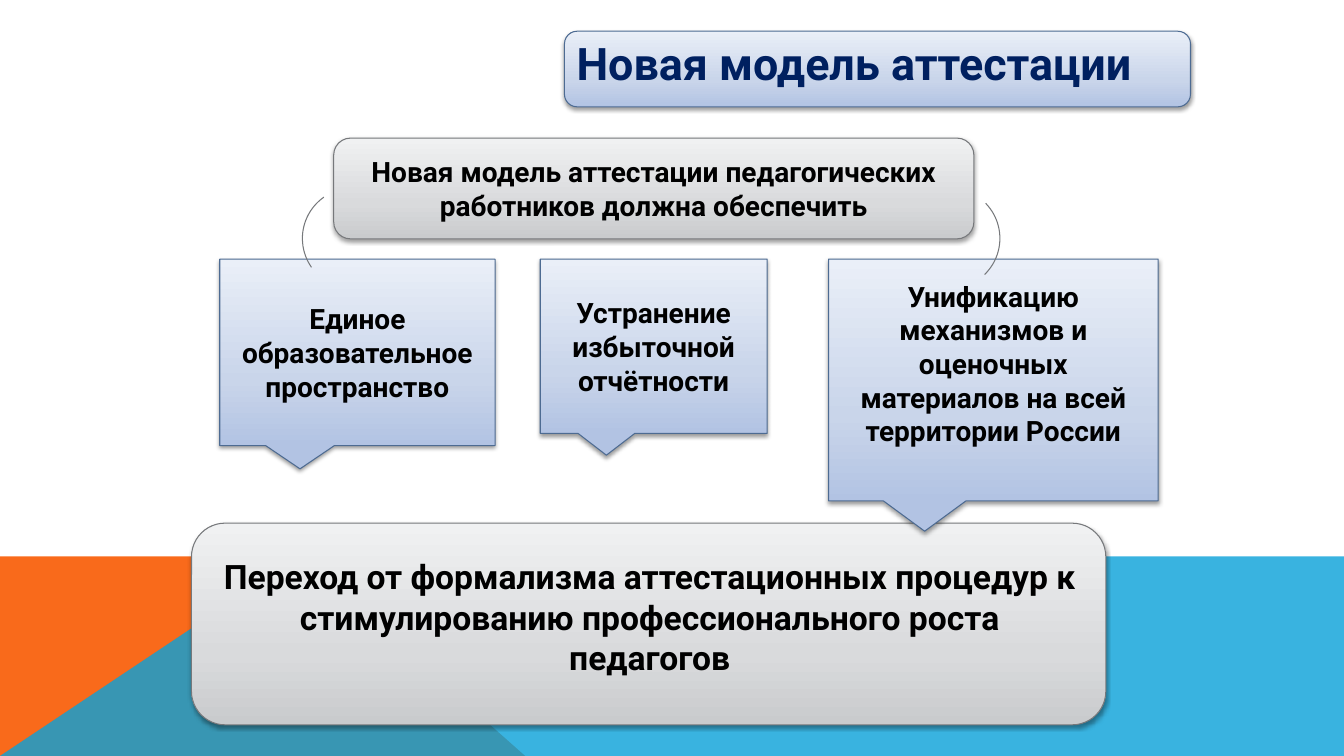
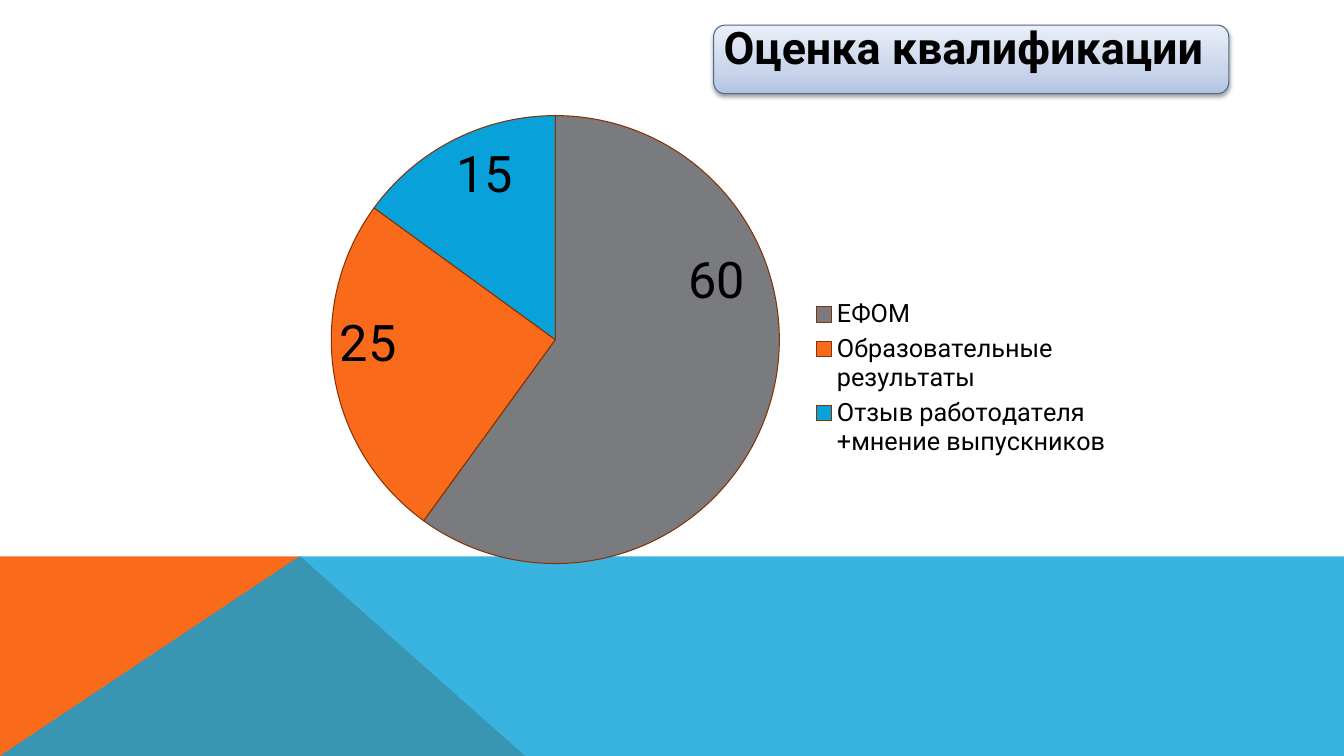
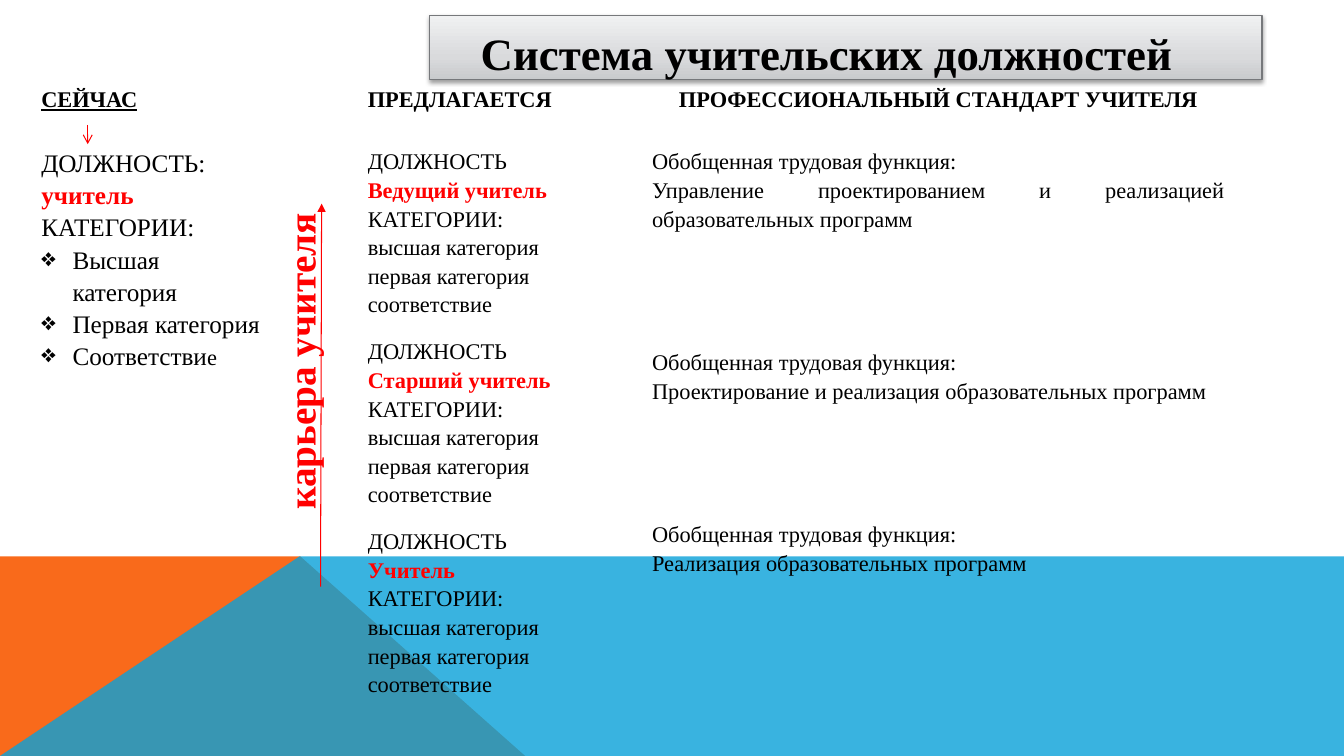
import dataclasses

import pptx
import pptx.chart.data
import pptx.dml.color
import pptx.enum.chart
import pptx.enum.shapes
import pptx.enum.text
import pptx.oxml
import pptx.oxml.ns
import pptx.util

RGB = pptx.dml.color.RGBColor
Inches, Pt = pptx.util.Inches, pptx.util.Pt
qn = pptx.oxml.ns.qn
SHAPE = pptx.enum.shapes.MSO_SHAPE
ALIGN = pptx.enum.text.PP_ALIGN
ANCHOR = pptx.enum.text.MSO_ANCHOR

# Shared colours and fonts
BLACK = RGB(0x00, 0x00, 0x00)
NAVY = RGB(0x00, 0x20, 0x60)
RED = RGB(0xFF, 0x00, 0x00)
ORANGE = RGB(0xF9, 0x6A, 0x1B)
CYAN = RGB(0x08, 0xA1, 0xD9)
GRAY = RGB(0x79, 0x7B, 0x7E)
BROWN = RGB(0x86, 0x32, 0x04)
GRAY_LINE = RGB(0x76, 0x78, 0x7B)
BLUE_LINE = RGB(0x4D, 0x6B, 0x92)
BLUE_STOPS = (RGB(0xB2, 0xC3, 0xE3), RGB(0xC9, 0xD5, 0xEA), RGB(0xEA, 0xEF, 0xF8))
GRAY_STOPS = (RGB(0xC9, 0xCB, 0xCD), RGB(0xD9, 0xDA, 0xDC), RGB(0xF0, 0xF1, 0xF2))
BLUE, SILVER = (BLUE_STOPS, BLUE_LINE), (GRAY_STOPS, GRAY_LINE)
SANS, SERIF = "Roboto", "Times New Roman"
NO_STYLE = "{2D5ABB26-0587-4C30-8999-92F81FD0307C}"


@dataclasses.dataclass
class Box:
    """A region; boxes inside it are given in hundredths of its width and height."""
    x: float
    y: float
    w: float
    h: float

    def sub(self, x, y, w, h):
        return Box(self.x + self.w * x / 100, self.y + self.h * y / 100,
                   self.w * w / 100, self.h * h / 100)

    def at(self):
        return [Inches(v) for v in (self.x, self.y, self.w, self.h)]

    def point(self, x, y):
        return Inches(self.x + self.w * x / 100), Inches(self.y + self.h * y / 100)


PAGE = Box(0, 0, 13.33, 7.5)


def xml(text):
    return pptx.oxml.parse_xml(text.replace(" ", f" {pptx.oxml.ns.nsdecls('a')} ", 1))


def apply(obj, formats):
    for name, value in formats.items():
        setattr(obj, name, value)


def set_font(font, color=BLACK, **formats):
    apply(font, formats)
    font.color.rgb = color


def write(tf, paras, margins=None, **base):
    """Each paragraph is (runs, paragraph formats); each run is (text, font formats)."""
    apply(tf, {"word_wrap": True, **(margins or {})})
    for i, (runs, formats) in enumerate(paras):
        p = tf.add_paragraph() if i else tf.paragraphs[0]
        apply(p, formats)
        for text, font in runs:
            r = p.add_run()
            r.text = text
            set_font(r.font, **{**base, **font})


def set_indent(p, left, first=0):
    pPr = p._p.get_or_add_pPr()
    pPr.set("marL", str(Inches(left)))
    pPr.set("indent", str(Inches(first)))
    return pPr


def panel(slide, box, kind, style):
    """A shape with a vertical gradient and a soft shadow."""
    stops, line = style
    sp = slide.shapes.add_shape(kind, *box.at())
    sp.fill.gradient()
    sp.fill.gradient_angle = 90
    gs_list = sp.element.spPr.find(qn("a:gradFill")).find(qn("a:gsLst"))
    for gs in list(gs_list):
        gs_list.remove(gs)
    for pos, color in zip((0, 35, 100), stops):
        gs_list.append(xml(f'<a:gs pos="{pos * 1000}"><a:srgbClr val="{color}"/></a:gs>'))
    sp.line.color.rgb = line
    sp.line.width = Pt(0.75)
    sp.element.spPr.append(xml(
        f'<a:effectLst ><a:outerShdw blurRad="{Pt(3.1)}" dist="{Pt(1.6)}" dir="5400000" '
        'rotWithShape="0"><a:srgbClr val="000000"><a:alpha val="38000"/></a:srgbClr>'
        '</a:outerShdw></a:effectLst>'))
    return sp


def caption(slide, box, text, align, margins=None, **font):
    tf = slide.shapes.add_textbox(*box.at()).text_frame
    write(tf, [([(text, {})], {"alignment": align})], margins, bold=True, **font)


def arrow(slide, box, start, end, tail):
    c = slide.shapes.add_connector(pptx.enum.shapes.MSO_CONNECTOR.STRAIGHT,
                                   *box.point(*start), *box.point(*end))
    c.line.color.rgb = RED
    c.line.width = Pt(0.75)
    c.line._get_or_add_ln().append(xml(f'<a:tailEnd type="{tail}"/>'))
    c._element.spPr.append(xml("<a:effectLst />"))


def bands(slide, layout, box):
    """Bottom bands, kept on the layout that all slides use."""
    top = 73.6
    orange = [(0, 100), (0, top), (22.35, top), (39.08, 100)]
    blue = [(0, 100), (22.28, top), (100, top), (100, 100)]
    for points, color, alpha in ((orange, ORANGE, 100), (blue, CYAN, 80)):
        start, *rest = [box.point(*pt) for pt in points]
        fb = slide.shapes.build_freeform(*start)
        fb.add_line_segments(rest, close=True)
        sp = fb.convert_to_shape()
        sp.shadow.inherit = False
        sp.fill.solid()
        sp.fill.fore_color.rgb = color
        sp.line.fill.background()
        clr = sp.element.spPr.find(qn("a:solidFill"))[0]
        clr.append(xml(f'<a:alpha val="{alpha * 1000}"/>'))
        layout.shapes._spTree.append(sp.element)


# Slide 1: model
def callouts(slide, box):
    for x, w, h, text, bottom in (
            (0, 29.33, 77.08, "Единое образовательное пространство", 0.05),
            (34.15, 24.17, 72.08, "Устранение избыточной отчётности", 0.05),
            (64.87, 35.13, 100, "Унификацию механизмов и оценочных материалов "
                                "на всей территории России", 0.38)):
        sp = panel(slide, box.sub(x, 0, w, h), SHAPE.RECTANGULAR_CALLOUT, BLUE)
        write(sp.text_frame, [([(text, {})], {"alignment": ALIGN.CENTER})],
              {"margin_bottom": Inches(bottom), "vertical_anchor": ANCHOR.MIDDLE},
              name=SANS, size=Pt(20), bold=True)


def model_slide(slide, box):
    panel(slide, box.sub(42, 4.13, 46.58, 10), SHAPE.ROUNDED_RECTANGLE, BLUE)
    panel(slide, box.sub(14.25, 69.2, 68.03, 26.67), SHAPE.ROUNDED_RECTANGLE, SILVER)
    lead = panel(slide, box.sub(24.83, 18.27, 47.63, 13.33), SHAPE.ROUNDED_RECTANGLE, SILVER)
    write(lead.text_frame,
          [([("Новая модель аттестации педагогических работников должна обеспечить", {})],
            {"alignment": ALIGN.CENTER})],
          {"vertical_anchor": ANCHOR.MIDDLE}, name=SANS, size=Pt(20), bold=True)
    caption(slide, box.sub(9.38, 4.13, 79.5, 8.53), "Новая модель аттестации", ALIGN.RIGHT,
            {"margin_right": Inches(0.62)}, name=SANS, size=Pt(32), color=NAVY)
    callouts(slide, box.sub(16.35, 34.27, 69.83, 32))
    # Arcs from the lead to the outer callouts
    for x, angle in ((66.9, 45.9), (22.5, 235)):
        arc = slide.shapes.add_shape(SHAPE.ARC, *box.sub(x, 24.87, 7.5, 13.33).at())
        arc.rotation = angle
        arc.shadow.inherit = False
        arc.fill.background()
        arc.line.color.rgb = GRAY_LINE
        arc.line.width = Pt(0.75)
    caption(slide, box.sub(15.53, 72.93, 65.63, 17.47),
            "Переход от формализма аттестационных процедур к стимулированию "
            "профессионального роста педагогов", ALIGN.CENTER, name=SANS, size=Pt(24))


# Slide 2: pie chart
def chart_layout(x, y, w=None, h=None, inner=False):
    modes = ['<c:layoutTarget val="inner"/>'] if inner else []
    if w:
        modes += ['<c:xMode val="edge"/>', '<c:yMode val="edge"/>']
    sizes = [("x", x), ("y", y), ("w", w), ("h", h)]
    values = [f'<c:{k} val="{v}"/>' for k, v in sizes if v is not None]
    return pptx.oxml.parse_xml(
        f'<c:layout {pptx.oxml.ns.nsdecls("c")}><c:manualLayout>'
        f'{"".join(modes + values)}</c:manualLayout></c:layout>')


def put_layout(parent, after, layout):
    for old in parent.findall(qn("c:layout")):
        parent.remove(old)
    if after is None:
        parent.insert(0, layout)
    else:
        parent.find(qn(after)).addnext(layout)


def pie(slide, box):
    data = pptx.chart.data.CategoryChartData()
    data.categories = ["ЕФОМ", "Образовательные результаты",
                       "Отзыв работодателя +мнение выпускников"]
    data.add_series("Series 1", (60, 25, 15))
    chart = slide.shapes.add_chart(pptx.enum.chart.XL_CHART_TYPE.PIE, *box.at(), data).chart
    chart.has_title = False
    set_font(chart.font, name=SANS, size=Pt(18))
    plot = chart.plots[0]
    plot.vary_by_categories = True
    for i, color in enumerate((GRAY, ORANGE, CYAN)):
        pt = plot.series[0].points[i]
        pt.format.fill.solid()
        pt.format.fill.fore_color.rgb = color
        pt.format.line.color.rgb = BROWN
        pt.format.line.width = Pt(0.75)
        set_font(pt.data_label.font, name=SANS, size=Pt(36))
        pt.data_label.position = pptx.enum.chart.XL_LABEL_POSITION.INSIDE_END
    chart.has_legend = True
    apply(chart.legend, {"position": pptx.enum.chart.XL_LEGEND_POSITION.RIGHT,
                         "include_in_layout": False})
    set_font(chart.legend.font, name=SANS, size=Pt(18))
    # Places of the pie, the legend and the first label
    root = chart._chartSpace
    put_layout(next(root.iter(qn("c:plotArea"))), None,
               chart_layout(0.12, 0.06, 0.5, 0.75, inner=True))
    put_layout(chart.legend._element, "c:legendPos", chart_layout(0.66, 0.36, 0.33, 0.28))
    put_layout(next(root.iter(qn("c:dLbl"))), "c:idx", chart_layout(-0.02, -0.16))


def rating_slide(slide, box):
    panel(slide, box.sub(53.1, 3.33, 38.33, 9.07), SHAPE.ROUNDED_RECTANGLE, BLUE)
    pie(slide, box.sub(16.65, 10.53, 66.68, 79.07))
    caption(slide, box.sub(53.1, 2, 40.05, 8.53), "Оценка квалификации", ALIGN.LEFT,
            name=SANS, size=Pt(32))


# Slide 3: table of posts
def lines(texts, **formats):
    return [([(t, {})], dict(formats)) for t in texts]


def posts_table(slide, box):
    tbl = slide.shapes.add_table(2, 4, *box.at()).table
    tbl._tbl.tblPr.find(qn("a:tableStyleId")).text = NO_STYLE
    apply(tbl, {"first_row": False, "horz_banding": False})
    for col, w in zip(tbl.columns, (2.38, 0.86, 2.82, 5.82)):
        col.width = Inches(box.w * w / 11.88)
    for row, h in zip(tbl.rows, (0.62, 5.9)):
        row.height = Inches(box.h * h / 6.52)

    strong, red = {"bold": True}, {"bold": True, "color": RED}
    big = {"size": Pt(18)}
    now = [([("ДОЛЖНОСТЬ: ", big), ("учитель", {**big, **red})], {}),
           ([("КАТЕГОРИИ:", big)], {}),
           ([("Высшая категория", big)], {}),
           ([("Первая категория", big)], {}),
           ([("Соответстви", big), ("е", {})], {})]
    posts, functions = [], []
    for i, (post, function) in enumerate((
            ("Ведущий учитель",
             "Управление проектированием и реализацией образовательных программ"),
            ("Старший учитель", "Проектирование и реализация образовательных программ"),
            ("Учитель", "Реализация образовательных программ"))):
        group = lines(["ДОЛЖНОСТЬ", post, "КАТЕГОРИИ:", "высшая категория",
                       "первая категория", "соответствие"])
        group[1][0][0][1].update(red)
        duty = lines(["Обобщенная трудовая функция:", function], alignment=ALIGN.JUSTIFY)
        if i:
            group[0][1]["space_before"] = Pt(13)
            duty[0][1]["space_before"] = Pt(82)
        posts += group
        functions += duty
    career = [([("карьера учителя", {**red, "size": Pt(28)})], {"alignment": ALIGN.CENTER})]
    rows = [
        [[([("СЕЙЧАС", {**strong, "underline": True})], {})],
         [],
         [([("ПРЕДЛАГАЕТСЯ", strong)], {})],
         [([("ПРОФЕССИОНАЛЬНЫЙ СТАНДАРТ УЧИТЕЛЯ", strong)], {"alignment": ALIGN.CENTER})]],
        [now, career, posts, functions]]
    for i, row in enumerate(rows):
        for j, paras in enumerate(row):
            cell = tbl.cell(i, j)
            cell.fill.background()
            apply(cell, {"margin_left": Inches(0.07), "margin_right": Inches(0.07),
                         "margin_top": 0, "margin_bottom": 0})
            paras = [(runs, {"line_spacing": 1.15, **f}) for runs, f in paras]
            write(cell.text_frame, paras, name=SERIF, size=Pt(16), bold=False)
    # Bullets and the upright career label
    for p in tbl.cell(1, 0).text_frame.paragraphs[2:]:
        set_indent(p, 0.31, -0.31).append(xml('<a:buChar char="❖"/>'))
    upright = tbl.cell(1, 1)
    upright._tc.get_or_add_tcPr().set("vert", "vert270")
    set_indent(upright.text_frame.paragraphs[0], 1.63)


def posts_slide(slide, box):
    panel(slide, box.sub(31.95, 2, 61.95, 8.53), SHAPE.RECTANGLE, SILVER)
    caption(slide, box.sub(29.78, 2.8, 61.95, 8.53), "Система учительских должностей",
            ALIGN.CENTER, {"margin_left": Inches(0.3)}, name=SERIF, size=Pt(32))
    posts_table(slide, box.sub(2.55, 11.07, 89.1, 86.93))
    arrow(slide, box, (23.85, 77.6), (23.93, 26.93), "triangle")
    arrow(slide, box, (6.53, 16.53), (6.53, 19.07), "arrow")


def main():
    prs = pptx.Presentation()
    prs.slide_width, prs.slide_height = Inches(PAGE.w), Inches(PAGE.h)
    layout = prs.slide_layouts[6]
    for i, build in enumerate((model_slide, rating_slide, posts_slide)):
        slide = prs.slides.add_slide(layout)
        if i == 0:
            bands(slide, layout, PAGE)
        build(slide, PAGE)
    prs.save("out.pptx")


if __name__ == "__main__":
    main()
